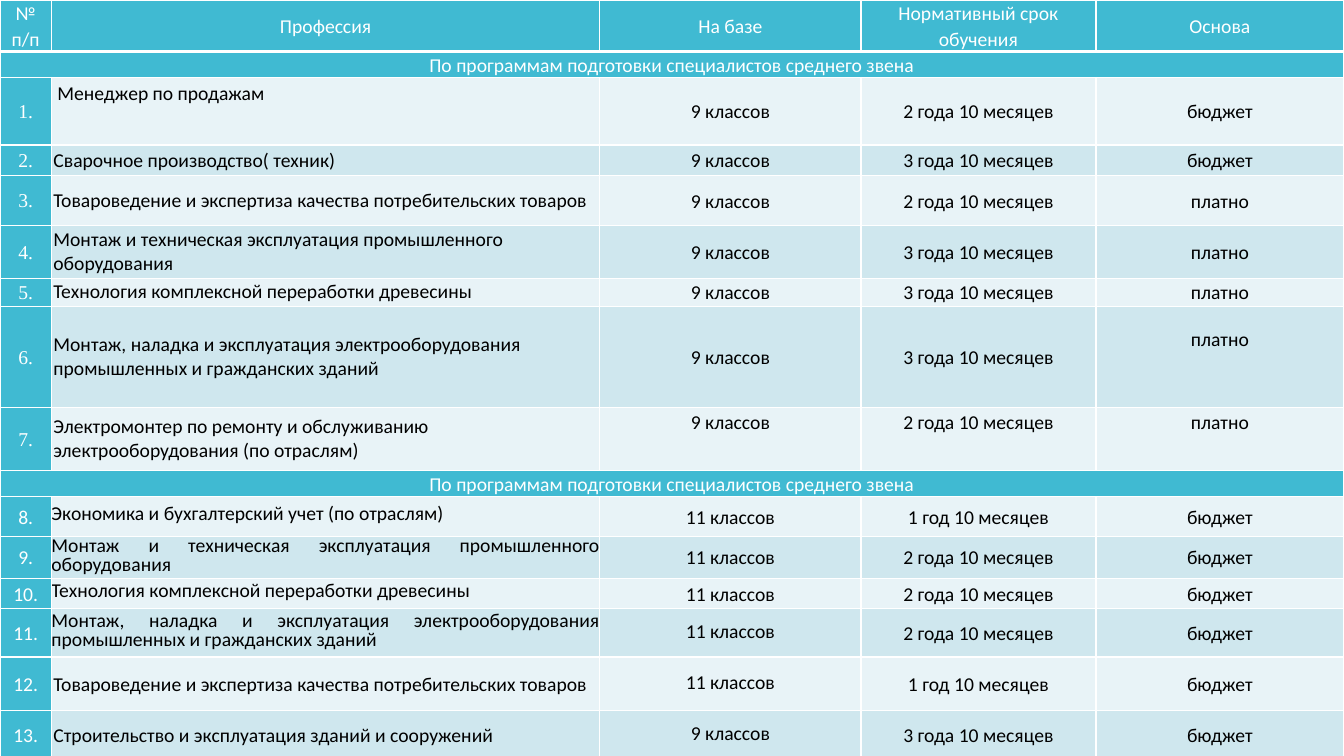
import lxml.etree
import pptx
import pptx.dml.color
import pptx.enum.text
import pptx.oxml.ns
import pptx.util

Inches = pptx.util.Inches
Pt = pptx.util.Pt
RGBColor = pptx.dml.color.RGBColor
ALIGN = pptx.enum.text.PP_ALIGN
ANCHOR = pptx.enum.text.MSO_ANCHOR
qn = pptx.oxml.ns.qn

WHITE = RGBColor(0xFF, 0xFF, 0xFF)
BLACK = RGBColor(0, 0, 0)
TEAL = RGBColor(0x40, 0xBA, 0xD2)
BANDS = (RGBColor(0xE8, 0xF3, 0xF7), RGBColor(0xCF, 0xE7, 0xEE))

COL_WIDTHS = (0.51, 5.44, 2.59, 2.33, 2.46)
ROW_HEIGHTS = (0.51, 0.26, 0.67, 0.3, 0.5, 0.52, 0.28, 1,
               0.63, 0.26, 0.39, 0.42, 0.3, 0.48, 0.53, 0.48)
HEADERS = ("№ п/п", "Профессия", "На базе", "Нормативный срок обучения", "Основа")
SECTION = "По программам подготовки специалистов среднего звена"
AFTER_9 = (
    ("Менеджер по продажам", "9 классов", "2 года 10 месяцев", "бюджет"),
    ("Сварочное производство( техник)", "9 классов", "3 года 10 месяцев", "бюджет"),
    ("Товароведение и экспертиза качества потребительских товаров",
     "9 классов", "2 года 10 месяцев", "платно"),
    ("Монтаж и техническая эксплуатация промышленного оборудования",
     "9 классов", "3 года 10 месяцев", "платно"),
    ("Технология комплексной переработки древесины",
     "9 классов", "3 года 10 месяцев", "платно"),
    ("Монтаж, наладка и эксплуатация электрооборудования промышленных и гражданских зданий",
     "9 классов", "3 года 10 месяцев", "платно"),
    ("Электромонтер по ремонту и обслуживанию электрооборудования (по отраслям)",
     "9 классов", "2 года 10 месяцев", "платно"),
)
AFTER_11 = (
    ("Экономика и бухгалтерский учет (по отраслям)",
     "11 классов", "1 год 10 месяцев", "бюджет"),
    ("Монтаж и техническая эксплуатация промышленного оборудования",
     "11 классов", "2 года 10 месяцев", "бюджет"),
    ("Технология комплексной переработки древесины",
     "11 классов", "2 года 10 месяцев", "бюджет"),
    ("Монтаж, наладка и эксплуатация электрооборудования промышленных и гражданских зданий",
     "11 классов", "2 года 10 месяцев", "бюджет"),
    ("Товароведение и экспертиза качества потребительских товаров",
     "11 классов", "1 год 10 месяцев", "бюджет"),
    ("Строительство и эксплуатация зданий и сооружений",
     "9 классов", "3 года 10 месяцев", "бюджет"),
)


def set_borders(cell, bottom=1):
    tcPr = cell._tc.get_or_add_tcPr()
    for i, side in enumerate("LRTB"):
        ln = lxml.etree.Element(qn("a:ln" + side))
        ln.set("w", str(Pt(bottom if side == "B" else 1)))
        fill = lxml.etree.SubElement(ln, qn("a:solidFill"))
        lxml.etree.SubElement(fill, qn("a:srgbClr")).set("val", str(WHITE))
        tcPr.insert(i, ln)


def fill_cell(cell, text, fill, color=BLACK, font="Calibri", align=ALIGN.CENTER,
              spacing=1.07, after=8, anchor=ANCHOR.MIDDLE, margin=0):
    cell.fill.solid()
    cell.fill.fore_color.rgb = fill
    cell.vertical_anchor = anchor
    cell.margin_left = cell.margin_right = Inches(margin)
    cell.margin_top = cell.margin_bottom = Inches(margin)
    p = cell.text_frame.paragraphs[0]
    p.text = text
    p.alignment = align
    p.line_spacing = spacing
    p.space_after = Pt(after)
    p.font.size = Pt(14)
    p.font.name = font
    p.font.color.rgb = color


def pin_to_top(cell, offset):
    cell.vertical_anchor = ANCHOR.TOP
    cell.margin_top = Inches(offset)


def name_style(number):
    if 8 <= number <= 11:
        return dict(align=ALIGN.JUSTIFY, spacing=Pt(13.7), after=15)
    if 3 <= number <= 7:
        return dict(align=ALIGN.LEFT, spacing=1.0, after=0, margin=0.02)
    return dict(align=ALIGN.LEFT, margin=0.02)


def add_section(table, row):
    first = table.cell(row, 0)
    first.merge(table.cell(row, len(COL_WIDTHS) - 1))
    fill_cell(first, SECTION, TEAL, WHITE, anchor=ANCHOR.BOTTOM)


def add_programs(table, top, start, programs):
    for i, (name, *details) in enumerate(programs):
        number, row, band = start + i, top + i, BANDS[i % 2]
        fill_cell(table.cell(row, 0), f"{number}.", TEAL, WHITE,
                  font="Times New Roman" if number < 8 else "Calibri")
        fill_cell(table.cell(row, 1), name, band, **name_style(number))
        for col, text in enumerate(details, 2):
            exact = col == 2 and number > 10
            fill_cell(table.cell(row, col), text, band,
                      spacing=Pt(15.6) if exact else 1.07)


def add_program_table(s):
    table = s.shapes.add_table(len(ROW_HEIGHTS), len(COL_WIDTHS), 0, 0,
                               Inches(13.33), Inches(7.5)).table
    for col, width in zip(table.columns, COL_WIDTHS):
        col.width = Inches(width)
    for row, height in zip(table.rows, ROW_HEIGHTS):
        row.height = Inches(height)
    for col, text in enumerate(HEADERS):
        fill_cell(table.cell(0, col), text, TEAL, WHITE)
    add_section(table, 1)
    add_programs(table, 2, 1, AFTER_9)
    add_section(table, 9)
    add_programs(table, 10, 8, AFTER_11)
    pin_to_top(table.cell(2, 1), 0.03)
    table.cell(2, 1).margin_left = Inches(0.06)
    pin_to_top(table.cell(7, 4), 0.2)
    for col in (2, 3, 4):
        pin_to_top(table.cell(8, col), 0.02)
    for r in range(len(ROW_HEIGHTS)):
        for c in range(len(COL_WIDTHS)):
            set_borders(table.cell(r, c), bottom=3 if r == 0 else 1)


def main():
    prs = pptx.Presentation()
    prs.slide_width = Inches(13.33)
    prs.slide_height = Inches(7.5)
    s = prs.slides.add_slide(prs.slide_layouts[6])
    add_program_table(s)
    prs.save("out.pptx")


if __name__ == "__main__":
    main()
